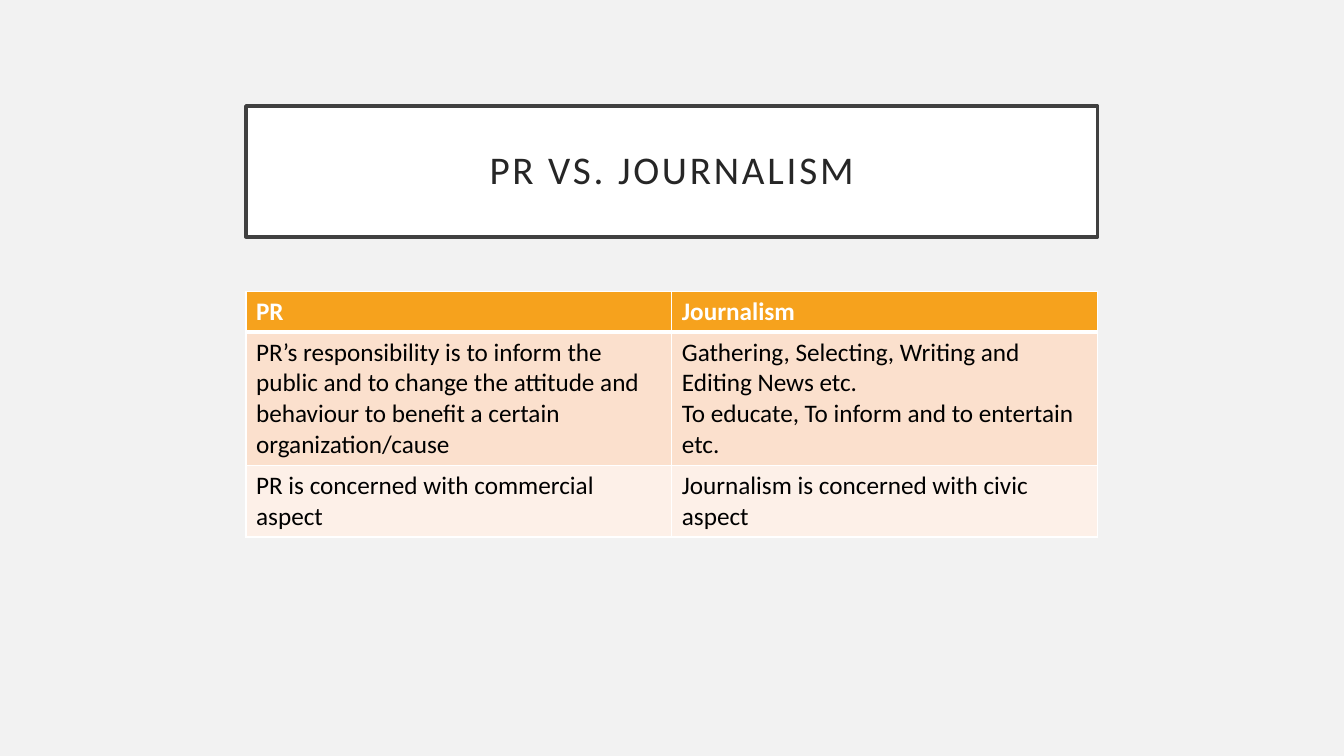
from lxml.etree import SubElement
from pptx import Presentation
from pptx.dml.color import RGBColor
from pptx.enum.shapes import MSO_SHAPE
from pptx.enum.text import MSO_ANCHOR, PP_ALIGN
from pptx.oxml import parse_xml
from pptx.oxml.ns import nsdecls, qn
from pptx.util import Cm, Pt

BACKGROUND = RGBColor(0xF2, 0xF2, 0xF2)
WHITE = RGBColor(0xFF, 0xFF, 0xFF)
BLACK = RGBColor(0, 0, 0)
FRAME = RGBColor(0x40, 0x40, 0x40)
TITLE_INK = RGBColor(0x26, 0x26, 0x26)
ORANGE = RGBColor(0xF6, 0xA2, 0x1D)
PEACH = RGBColor(0xFB, 0xE0, 0xCD)
CREAM = RGBColor(0xFD, 0xF0, 0xE8)

LEFT, WIDTH = Cm(6.2), Cm(21.46)
ROW_HEIGHT = Cm(1.03)
ROW_FILLS = [ORANGE, PEACH, CREAM]
COMPARISON = [
    ["PR", "Journalism"],
    [
        "PR’s responsibility is to inform the public and to change the attitude "
        "and behaviour to benefit a certain organization/cause",
        "Gathering, Selecting, Writing and Editing News etc.\n"
        "To educate, To inform and to entertain etc.",
    ],
    [
        "PR is concerned with commercial aspect",
        "Journalism is concerned with civic aspect",
    ],
]


def set_format(target, values):
    for name, value in values.items():
        setattr(target, name, value)


def set_font(paragraph, color, **values):
    for run in paragraph.runs:
        set_format(run.font, {"name": "Calibri", **values})
        run.font.color.rgb = color


def set_fill(target, color):
    target.fill.solid()
    target.fill.fore_color.rgb = color


def set_borders(cell, widths):
    properties = cell._tc.get_or_add_tcPr()
    for index, (side, width) in enumerate(widths.items()):
        border = parse_xml(f'<a:ln{side} {nsdecls("a")} w="{Pt(width)}"/>')
        fill = SubElement(border, qn("a:solidFill"))
        SubElement(fill, qn("a:srgbClr"), val=str(WHITE))
        properties.insert(index, border)


def add_title(slide, text):
    shape = slide.shapes.add_shape(MSO_SHAPE.RECTANGLE, LEFT, Cm(2.67), WIDTH, Cm(3.3))
    shape.shadow.inherit = False
    set_fill(shape, WHITE)
    shape.line.color.rgb = FRAME
    shape.line.width = Pt(2.5)
    frame = shape.text_frame
    margins = dict.fromkeys(
        ["margin_left", "margin_right", "margin_top", "margin_bottom"], Cm(0.51)
    )
    set_format(
        frame,
        {"text": text, "word_wrap": True, "vertical_anchor": MSO_ANCHOR.MIDDLE, **margins},
    )
    paragraph = frame.paragraphs[0]
    set_format(paragraph, {"alignment": PP_ALIGN.CENTER, "line_spacing": 0.9})
    set_font(paragraph, TITLE_INK, size=Pt(28))
    paragraph.runs[0].font._element.set("spc", "200")


def add_comparison(slide, rows):
    table = slide.shapes.add_table(
        len(rows), len(rows[0]), LEFT, Cm(7.34), WIDTH, ROW_HEIGHT * len(rows)
    ).table
    for row_index, (texts, fill) in enumerate(zip(rows, ROW_FILLS)):
        header = row_index == 0
        table.rows[row_index].height = ROW_HEIGHT
        widths = {
            "L": 1,
            "R": 1,
            "T": 3 if row_index == 1 else 1,
            "B": 3 if header else 1,
        }
        for column_index, text in enumerate(texts):
            cell = table.cell(row_index, column_index)
            cell.text = text
            set_fill(cell, fill)
            set_borders(cell, widths)
            for paragraph in cell.text_frame.paragraphs:
                set_font(paragraph, WHITE if header else BLACK, size=Pt(18), bold=header)


def main():
    presentation = Presentation()
    set_format(presentation, {"slide_width": Cm(33.87), "slide_height": Cm(19.05)})
    slide = presentation.slides.add_slide(presentation.slide_layouts[6])
    set_fill(slide.background, BACKGROUND)
    add_title(slide, "PR VS. JOURNALISM")
    add_comparison(slide, COMPARISON)
    presentation.save("out.pptx")


if __name__ == "__main__":
    main()
